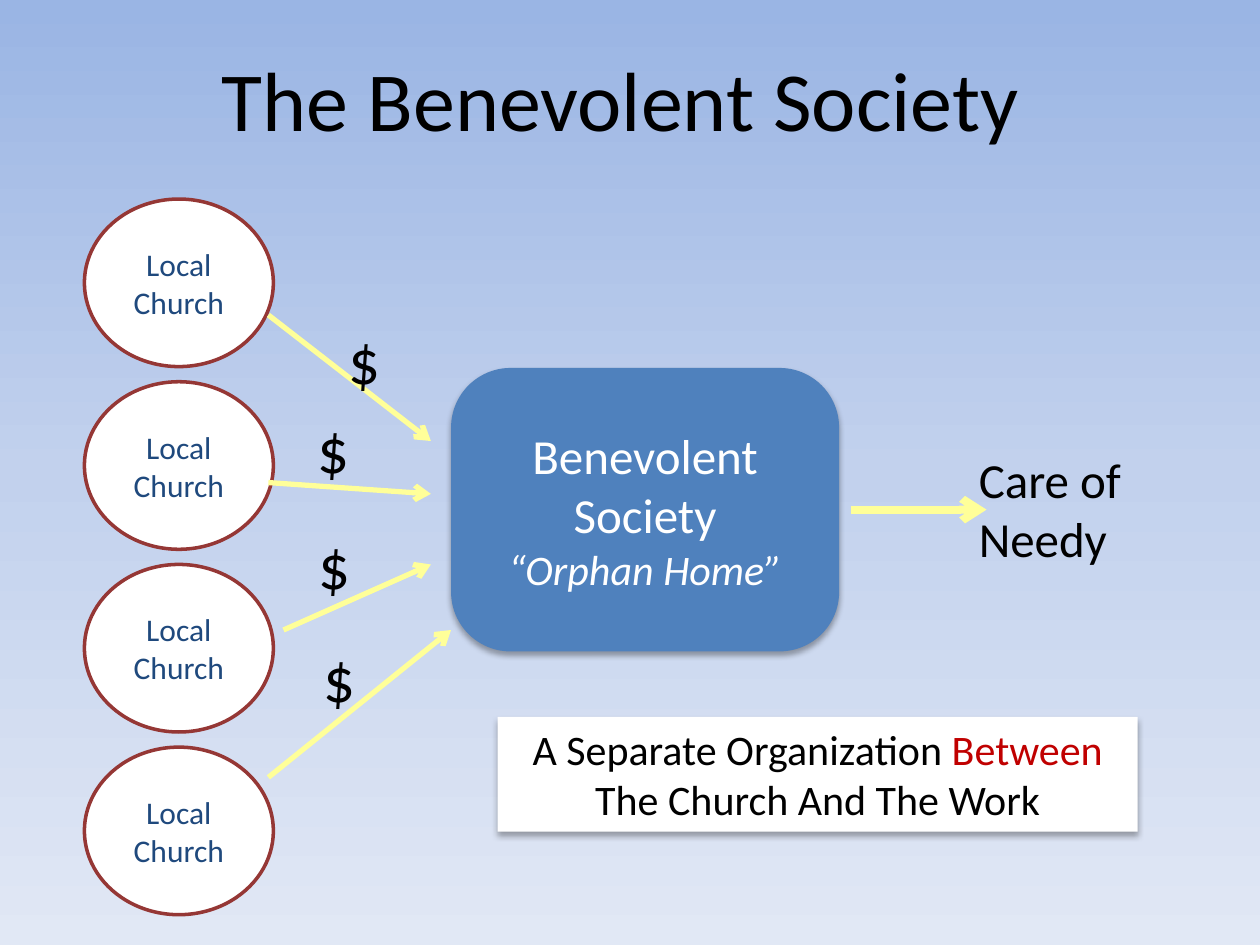
from copy import deepcopy
from dataclasses import dataclass

from lxml import etree
from pptx import Presentation
from pptx.dml.color import RGBColor
from pptx.enum.shapes import MSO_CONNECTOR, MSO_SHAPE
from pptx.enum.text import MSO_ANCHOR, MSO_AUTO_SIZE, PP_ALIGN
from pptx.oxml.ns import qn
from pptx.util import Inches, Pt

LEFT, CENTER = PP_ALIGN.LEFT, PP_ALIGN.CENTER
TOP, MIDDLE = MSO_ANCHOR.TOP, MSO_ANCHOR.MIDDLE
OVAL, RECTANGLE = MSO_SHAPE.OVAL, MSO_SHAPE.RECTANGLE
ROUNDED = MSO_SHAPE.ROUNDED_RECTANGLE
STRAIGHT, NO_AUTOFIT = MSO_CONNECTOR.STRAIGHT, MSO_AUTO_SIZE.NONE
TITLE_ONLY = 5


@dataclass(frozen=True)
class Theme:
    font: str = "Calibri"
    black: str = "000000"
    white: str = "FFFFFF"
    blue: str = "4F81BD"
    navy: str = "1F497D"
    maroon: str = "953735"
    red: str = "C00000"
    yellow: str = "FFFF99"
    sky: tuple = ((0, "9AB5E4"), (50, "C2D1ED"), (100, "E1E8F5"))
    title: int = 48
    dollar: int = 36
    large: int = 28
    medium: int = 24
    small: int = 18


THEME = Theme()


def rgb(color):
    return RGBColor.from_string(color)


def write(frame, lines, size, color=THEME.black, align=LEFT, anchor=TOP):
    """Fill a text frame; each line is a list of (text, format changes)."""
    frame.word_wrap = True
    frame.auto_size = NO_AUTOFIT
    frame.vertical_anchor = anchor
    for number, line in enumerate(lines):
        para = frame.paragraphs[0] if number == 0 else frame.add_paragraph()
        para.alignment = align
        for text, changes in line:
            span = para.add_run()
            span.text = text
            span.font.name = THEME.font
            span.font.size = Pt(changes.get("size", size))
            span.font.color.rgb = rgb(changes.get("color", color))
            span.font.italic = changes.get("italic", False)


def plain(*texts):
    return [[(text, {})] for text in texts]


def inches(box):
    return [Inches(length) for length in box]


def add_panel(page, kind, box, fill, outline=None):
    panel = page.shapes.add_shape(kind, *inches(box))
    panel.shadow.inherit = False
    panel.fill.solid()
    panel.fill.fore_color.rgb = rgb(fill)
    if outline:
        panel.line.color.rgb = rgb(outline)
        panel.line.width = Pt(2)
    else:
        panel.line.fill.background()
    return panel


def add_drop_shadow(panel):
    effects = panel.element.spPr.find(qn("a:effectLst"))
    shadow = etree.SubElement(effects, qn("a:outerShdw"), blurRad=str(Pt(3.5)),
                              dist=str(Pt(2.2)), dir="5400000", rotWithShape="0")
    color = etree.SubElement(shadow, qn("a:srgbClr"), val=THEME.black)
    etree.SubElement(color, qn("a:alpha"), val="32000")


def add_arrow(page, start, end, width=3):
    arrow = page.shapes.add_connector(STRAIGHT, *inches(start + end))
    arrow.line.color.rgb = rgb(THEME.yellow)
    arrow.line.width = Pt(width)
    etree.SubElement(arrow.line._get_or_add_ln(), qn("a:tailEnd"), type="arrow")
    etree.SubElement(arrow.element.spPr, qn("a:effectLst"))


def add_label(page, box, lines, size):
    label = page.shapes.add_textbox(*inches(box))
    write(label.text_frame, lines, size)


def paint_background(page):
    fill = page.background.fill
    fill.gradient()
    fill.gradient_angle = 270
    stops = page.element.find(".//" + qn("a:gsLst"))
    stops.insert(1, deepcopy(stops[0]))
    for element, (position, _) in zip(stops, THEME.sky):
        element.set("pos", str(position * 1000))
    for stop, (_, color) in zip(fill.gradient_stops, THEME.sky):
        stop.color.rgb = rgb(color)


def place_title(page, box):
    title = page.shapes.title
    title.left, title.top, title.width, title.height = inches(box)
    # The closing space is part of the centred line
    write(title.text_frame, plain("The Benevolent Society "), THEME.title, align=CENTER)


def place_churches(page, box, count=4, gap=0.12):
    left, top, width, height = box
    each = (height - gap * (count - 1)) / count
    for row in range(count):
        church = add_panel(page, OVAL, (left, top + row * (each + gap), width, each),
                           THEME.white, THEME.maroon)
        write(church.text_frame, plain("Local", "Church"), THEME.small,
              THEME.navy, CENTER, MIDDLE)


def place_gifts(page, box):
    """Arrows from the churches to the society, each with a dollar sign."""
    left, top, width, height = box
    right, bottom = left + width, top + height
    gifts = (
        ((left, top), (3.42, 3.5), (2.67, 2.5)),
        ((left, 3.83), (3.42, 3.92), (2.42, 3.21)),
        ((2.25, 5), (3.42, 4.48), (2.43, 4.13)),
        ((left, bottom), (right, 5), (2.47, 5.03)),
    )
    for start, end, corner in gifts:
        add_arrow(page, start, end)
        add_label(page, corner + (0.25, 0.71), plain("$"), THEME.dollar)


def place_society(page, box):
    society = add_panel(page, ROUNDED, box, THEME.blue)
    society.adjustments[0] = 0.21
    add_drop_shadow(society)
    lines = plain("Benevolent", "Society")
    lines.append([("“Orphan Home”", {"size": THEME.medium, "italic": True})])
    write(society.text_frame, lines, THEME.large, THEME.white, CENTER, MIDDLE)


def place_care(page, box):
    left, top, width, height = box
    middle = top + height / 2
    add_arrow(page, (left, middle), (left + 1.08, middle), 4.5)
    add_label(page, (left + 0.92, top, width - 0.92, height),
              plain("Care of", "Needy"), THEME.large)


def place_caption(page, box):
    caption = add_panel(page, RECTANGLE, box, THEME.white)
    add_drop_shadow(caption)
    lines = [[("A Separate Organization ", {}), ("Between", {"color": THEME.red})],
             [("The Church And The Work", {})]]
    write(caption.text_frame, lines, THEME.medium, align=CENTER)


def main():
    deck = Presentation()
    deck.slide_width, deck.slide_height = Inches(10), Inches(7.5)
    page = deck.slides.add_slide(deck.slide_layouts[TITLE_ONLY])
    paint_background(page)
    place_title(page, (0.75, 0.33, 8.5, 0.75))
    place_society(page, (3.58, 2.92, 3.08, 2.25))
    place_churches(page, (0.67, 1.58, 1.5, 5.68))
    place_gifts(page, (2.13, 2.5, 1.45, 3.67))
    place_care(page, (6.75, 3.52, 2.92, 1.05))
    place_caption(page, (3.95, 5.69, 5.08, 0.91))
    deck.save("out.pptx")


if __name__ == "__main__":
    main()
